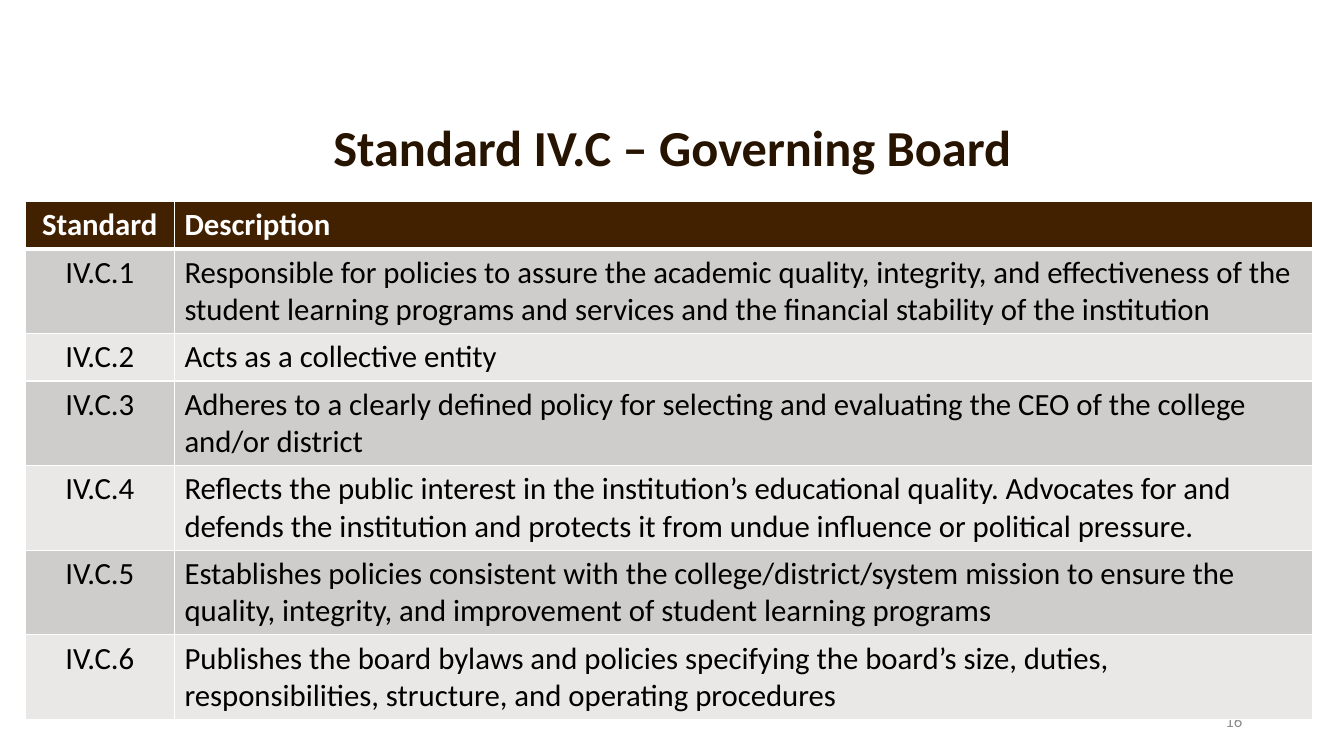
"""Build the slide listing the governing board standards IV.C.1 to IV.C.6."""
import dataclasses

import lxml.etree
import pptx
import pptx.dml.color
import pptx.enum.text
import pptx.oxml.ns
import pptx.util
from pptx.util import Inches


@dataclasses.dataclass(frozen=True)
class Theme:
    font: str = "Calibri"
    title: str = "261300"
    number: str = "8C8C8C"
    header: str = "422100"
    bands: tuple = ("CFCDCC", "E9E8E7")
    white: str = "FFFFFF"
    black: str = "000000"
    title_size: int = 36
    table_size: int = 22
    number_size: int = 12


theme = Theme()
ALIGN = pptx.enum.text.PP_ALIGN
ANCHOR = pptx.enum.text.MSO_ANCHOR


def write(text_frame, text, size, color, align, bold=False):
    text_frame.text = text
    text_frame.word_wrap = True
    paragraph = text_frame.paragraphs[0]
    paragraph.alignment = align
    font = paragraph.runs[0].font
    font.name = theme.font
    font.size = pptx.util.Pt(size)
    font.bold = bold
    font.color.rgb = pptx.dml.color.RGBColor.from_string(color)
    return paragraph


def add_border(cell, side, points):
    properties = cell._tc.get_or_add_tcPr()
    tag = pptx.oxml.ns.qn
    line = lxml.etree.SubElement(properties, tag(f"a:ln{side}"), w=str(pptx.util.Pt(points)))
    fill = lxml.etree.SubElement(line, tag("a:solidFill"))
    lxml.etree.SubElement(fill, tag("a:srgbClr"), val=theme.white)


descriptions = [
    "Responsible for policies to assure the academic quality, integrity, and effectiveness of the "
    "student learning programs and services and the financial stability of the institution",
    "Acts as a collective entity",
    "Adheres to a clearly defined policy for selecting and evaluating the CEO of the college "
    "and/or district",
    "Reflects the public interest in the institution’s educational quality. Advocates for and "
    "defends the institution and protects it from undue influence or political pressure.",
    "Establishes policies consistent with the college/district/system mission to ensure the "
    "quality, integrity, and improvement of student learning programs",
    "Publishes the board bylaws and policies specifying the board’s size, duties, "
    "responsibilities, structure, and operating procedures",
]
rows = [("Standard", "Description")]
rows += [(f"IV.C.{number}", text) for number, text in enumerate(descriptions, 1)]
row_heights = [0.47, 0.84, 0.47, 0.84, 0.84, 0.84, 0.84]
column_widths = [1.48, 11.29]

presentation = pptx.Presentation()
presentation.slide_width = Inches(13.33)
presentation.slide_height = Inches(7.5)
slide = presentation.slides.add_slide(presentation.slide_layouts[6])

title = slide.shapes.add_textbox(Inches(0.92), Inches(0.99), Inches(11.5), Inches(1))
title.text_frame.vertical_anchor = ANCHOR.MIDDLE
paragraph = write(title.text_frame, "Standard IV.C – Governing Board",
                  theme.title_size, theme.title, ALIGN.CENTER, True)
paragraph.line_spacing = 0.9

slide_number = slide.shapes.add_textbox(Inches(9.42), Inches(6.95), Inches(3), Inches(0.4))
slide_number.text_frame.vertical_anchor = ANCHOR.MIDDLE
write(slide_number.text_frame, "16", theme.number_size, theme.number, ALIGN.RIGHT)

table = slide.shapes.add_table(
    len(rows), len(column_widths), Inches(0.25), Inches(2),
    Inches(sum(column_widths)), Inches(sum(row_heights))).table
for column, width in zip(table.columns, column_widths):
    column.width = Inches(width)

for row_index, row in enumerate(rows):
    table.rows[row_index].height = Inches(row_heights[row_index])
    is_header = row_index == 0
    fill_color = theme.header if is_header else theme.bands[(row_index - 1) % 2]
    text_color = theme.white if is_header else theme.black
    for column_index, text in enumerate(row):
        cell = table.cell(row_index, column_index)
        align = ALIGN.LEFT if column_index else ALIGN.CENTER
        write(cell.text_frame, text, theme.table_size, text_color, align, is_header)
        for side in "LRTB":
            is_header_rule = (row_index, side) in ((0, "B"), (1, "T"))
            add_border(cell, side, 3 if is_header_rule else 1)
        cell.fill.solid()
        cell.fill.fore_color.rgb = pptx.dml.color.RGBColor.from_string(fill_color)

presentation.save("out.pptx")
